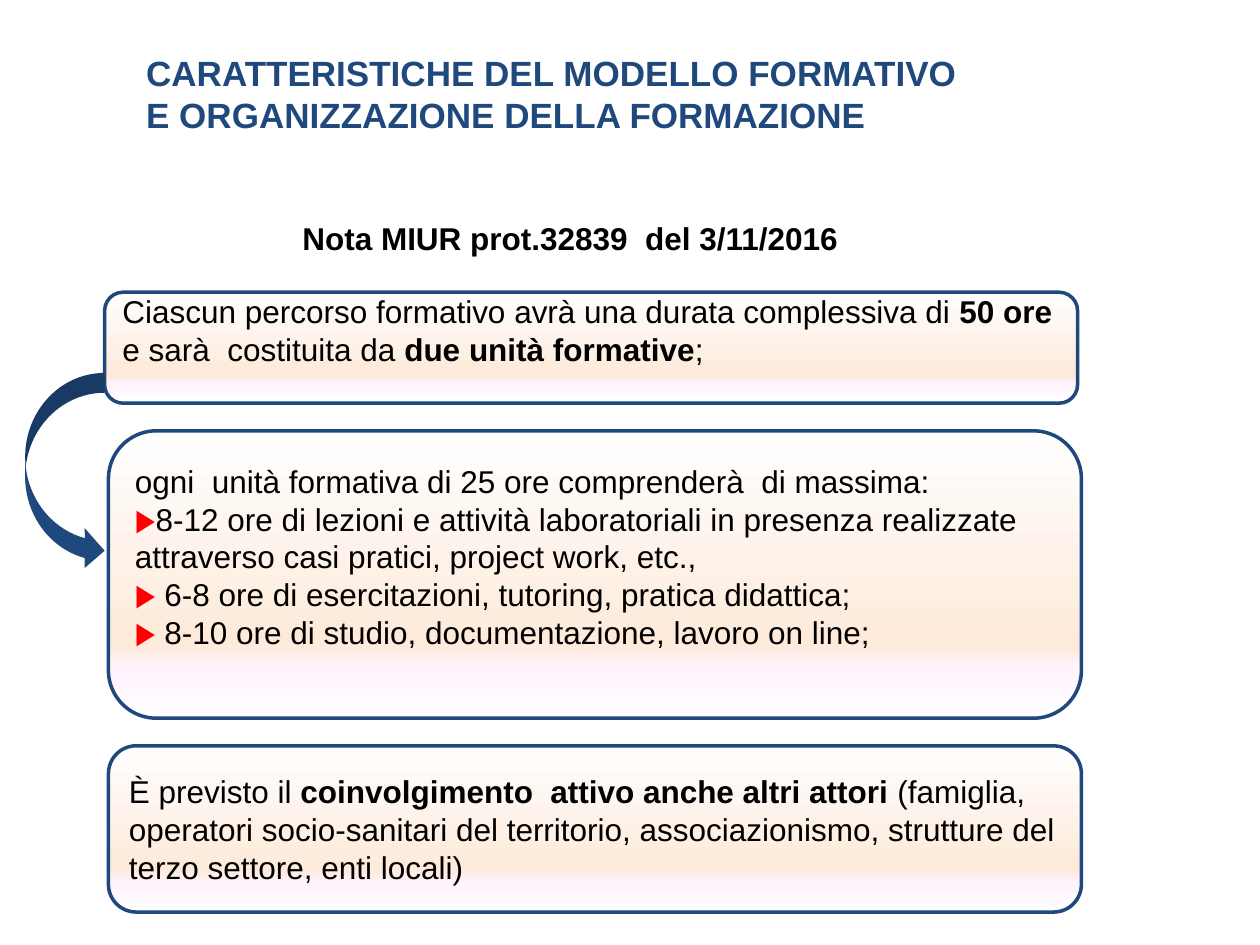
from copy import deepcopy
from pptx import Presentation
from pptx.dml.color import RGBColor
from pptx.enum.shapes import MSO_SHAPE
from pptx.enum.text import MSO_ANCHOR, MSO_AUTO_SIZE, PP_ALIGN
from pptx.oxml.ns import qn
from pptx.util import Pt

COLORS = {"navy": "1F497D", "black": "000000", "red": "FF0000",
          "white": "FFFFFF", "peach": "FDEADA", "lilac": "FFF3FF"}
STOPS = [(0, "white"), (74, "peach"), (83, "lilac"), (100, "white")]


class Deck:
    font = "Arial"
    size = 18

    def __init__(self, wide, high):
        self.prs = Presentation()
        self.prs.slide_width, self.prs.slide_height = Pt(wide), Pt(high)
        self.slide = self.prs.slides.add_slide(self.prs.slide_layouts[5])

    def color(self, name):
        return RGBColor.from_string(COLORS[name])

    def style(self, run, size=None, color="black", bold=False):
        font = run.font
        font.name, font.size, font.bold = self.font, Pt(size or self.size), bold
        font.color.rgb = self.color(color)

    def title(self, text, left, top, wide, high):
        shape = self.slide.shapes.title
        shape.left, shape.top = Pt(left), Pt(top)
        shape.width, shape.height = Pt(wide), Pt(high)
        frame = shape.text_frame
        frame.text = text
        frame.auto_size = MSO_AUTO_SIZE.NONE
        frame.vertical_anchor = MSO_ANCHOR.TOP
        for para in frame.paragraphs:
            para.alignment = PP_ALIGN.LEFT
            self.style(para.runs[0], 20, "navy", True)

    def label(self, text, *place):
        frame = self.slide.shapes.add_textbox(*map(Pt, place)).text_frame
        frame.word_wrap = False
        frame.text = text
        para = frame.paragraphs[0]
        para.alignment = PP_ALIGN.CENTER
        self.style(para.runs[0], bold=True)

    def shape(self, kind, *place):
        shape = self.slide.shapes.add_shape(kind, *map(Pt, place))
        shape.shadow.inherit = False
        return shape

    def shade(self, shape):
        shape.fill.gradient()
        shape.fill.gradient_angle = 270
        # Extend the preset gradient to one stop per entry
        stops = shape.element.spPr.find(qn("a:gradFill")).find(qn("a:gsLst"))
        while len(stops) < len(STOPS):
            stops.append(deepcopy(stops[0]))
        for stop, (pos, name) in zip(shape.fill.gradient_stops, STOPS):
            stop.position = pos / 100
            stop.color.rgb = self.color(name)

    def box(self, paras, left, top, wide, high, foot=3.6):
        shape = self.shape(MSO_SHAPE.ROUNDED_RECTANGLE, left, top, wide, high)
        self.shade(shape)
        shape.line.color.rgb = self.color("navy")
        shape.line.width = Pt(2)
        frame = shape.text_frame
        frame.word_wrap = True
        frame.vertical_anchor = MSO_ANCHOR.MIDDLE
        frame.margin_bottom = Pt(foot)
        for i, parts in enumerate(paras):
            para = frame.add_paragraph() if i else frame.paragraphs[0]
            para.alignment = PP_ALIGN.LEFT
            for text, look in parts:
                run = para.add_run()
                run.text = text
                self.style(run, **look)

    def arrow(self, *place):
        shape = self.shape(MSO_SHAPE.CURVED_RIGHT_ARROW, *place)
        shape.fill.solid()
        shape.fill.fore_color.rgb = self.color("navy")
        shape.line.fill.background()


def main():
    deck = Deck(720, 540)
    plain, bold, red = {}, {"bold": True}, {"color": "red"}
    left, wide, foot = 62, 556, 24.3

    # Headings
    deck.title("CARATTERISTICHE DEL MODELLO FORMATIVO\n"
               "E ORGANIZZAZIONE DELLA FORMAZIONE", 76.3, 26, 592.5, 55.5)
    deck.label("Nota MIUR prot.32839  del 3/11/2016", 164.2, 121.7, 323.3, 29)

    # Course length
    deck.box([[("Ciascun percorso formativo avrà una durata complessiva di ", plain),
               ("50 ore ", bold), ("e sarà  costituita da ", plain),
               ("due unità formative", bold), (";", plain)]],
             59.8, 167, wide, 63.4, foot)

    # Make-up of each unit
    items = [("▶", "8-12 ore di lezioni e attività laboratoriali in presenza "
                   "realizzate attraverso casi pratici, project work, etc.,"),
             ("▶ ", "6-8 ore di esercitazioni, tutoring, pratica didattica;"),
             ("▶ ", "8-10 ore di studio, documentazione, lavoro on line;")]
    intro = [("ogni  unità formativa di 25 ore comprenderà  di massima:", plain)]
    deck.box([intro] + [[(mark, red), (text, plain)] for mark, text in items],
             left, 246.2, wide, 164.2, foot)

    # Other parties
    deck.box([[("È previsto il ", plain),
               ("coinvolgimento  attivo anche altri attori ", bold),
               ("(famiglia, operatori socio-sanitari del territorio, "
                "associazionismo, strutture del terzo settore, enti locali)", plain)]],
             left, 426.2, wide, 95)

    # Link from course to units
    deck.arrow(14.4, 213.1, 45.4, 113)

    deck.prs.save("out.pptx")


if __name__ == "__main__":
    main()
